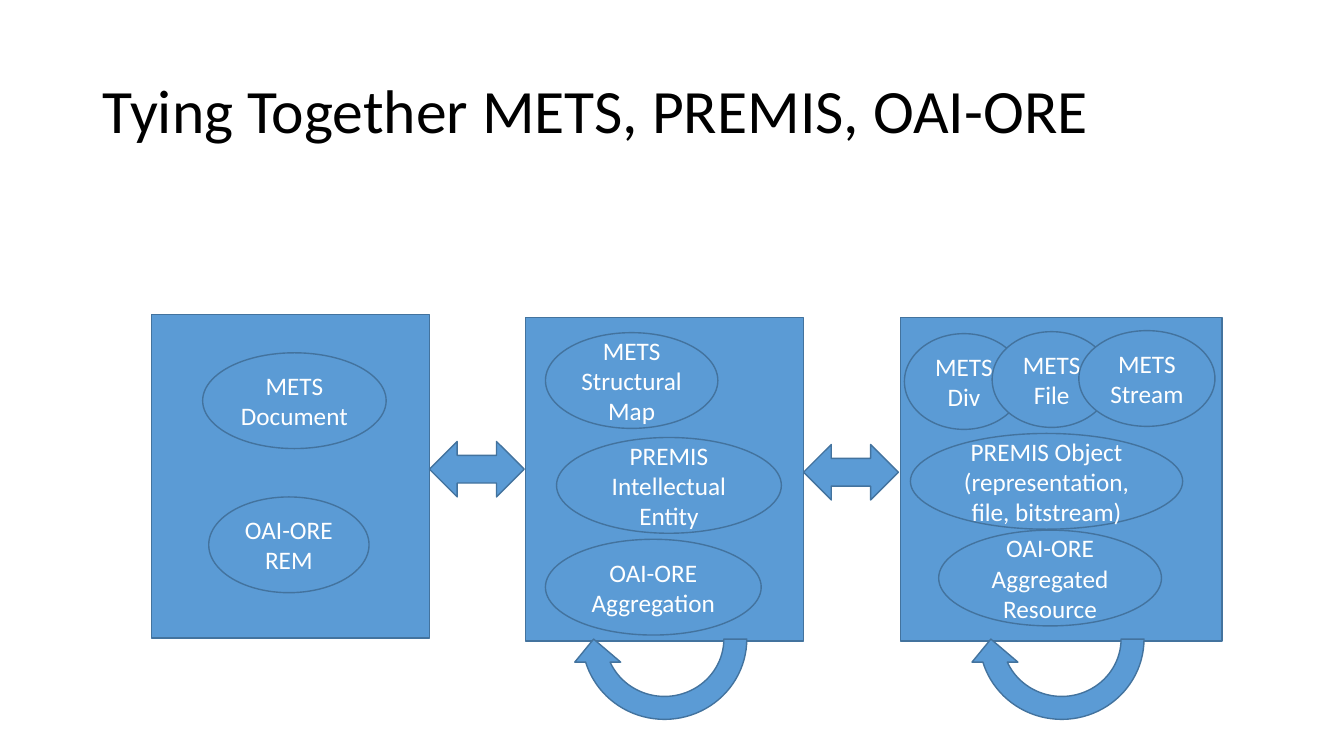
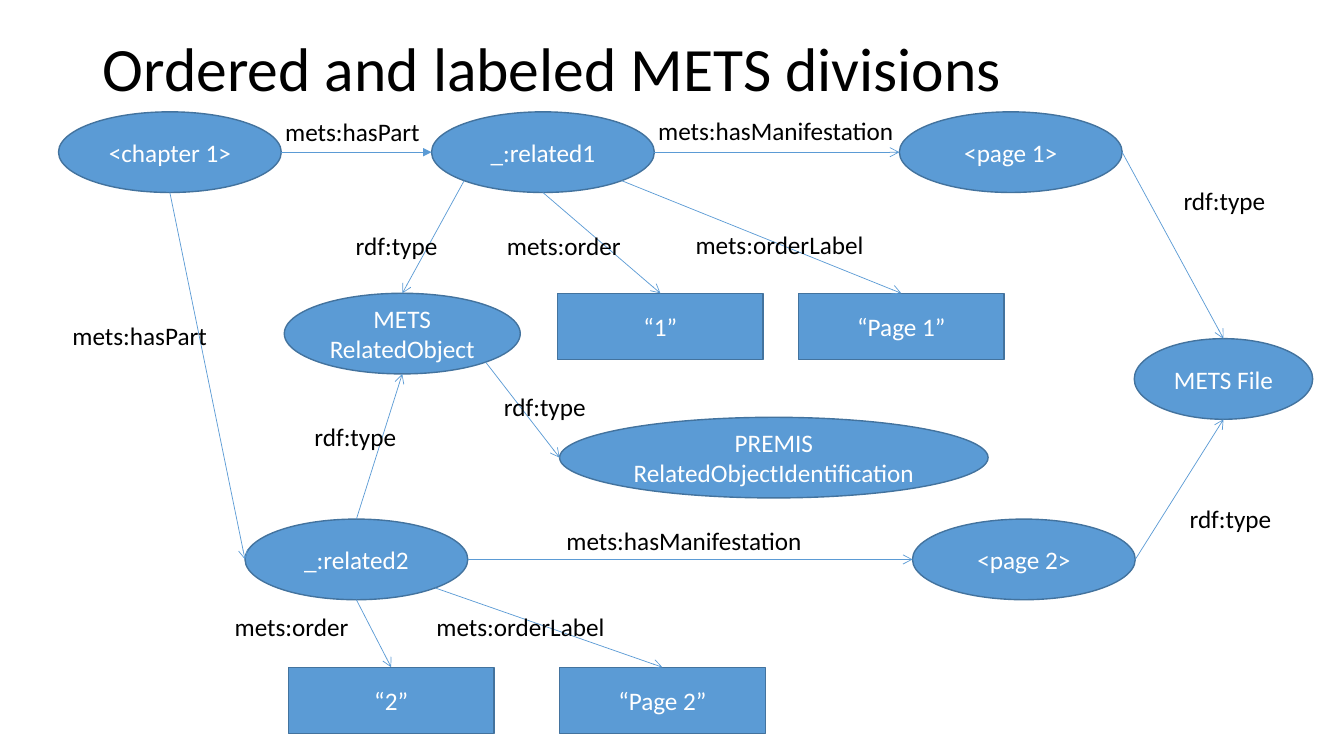
from lxml import etree
from pptx import Presentation
from pptx.dml.color import RGBColor
from pptx.enum.shapes import MSO_CONNECTOR, MSO_SHAPE
from pptx.enum.text import MSO_ANCHOR, MSO_AUTO_SIZE, PP_ALIGN
from pptx.oxml.ns import qn
from pptx.util import Inches, Pt

BLUE = RGBColor(0x5B, 0x9B, 0xD5)
OUTLINE = RGBColor(0x43, 0x73, 0x9E)
BLACK = RGBColor(0x00, 0x00, 0x00)
WHITE = RGBColor(0xFF, 0xFF, 0xFF)
FONT = "Calibri"
TITLE_ONLY = 5

OVAL, RECT = MSO_SHAPE.OVAL, MSO_SHAPE.RECTANGLE

# Slide 1: panel boxes, each with ovals as (left, top, width, text) inside it
OVAL_HEIGHT = 0.95
PANELS = [
    ((1.5, 3.12, 2.76, 3.21), [
        (0.57, 1.81, 1.59, "OAI-ORE\nREM"),
        (0.51, 0.38, 1.82, "METS\nDocument"),
    ]),
    ((5.21, 3.15, 2.76, 3.21), [
        (0.2, 2.2, 2.14, "OAI-ORE\nAggregation"),
        (0.2, 0.15, 1.71, "METS\nStructural Map"),
        (0.31, 1.19, 2.23, "PREMIS\nIntellectual\nEntity"),
    ]),
    ((8.93, 3.15, 3.19, 3.21), [
        (0.1, 1.15, 2.7, "PREMIS Object (representation, file, bitstream)"),
        (0.38, 2.11, 2.21, "OAI-ORE\nAggregated\nResource"),
        (0.04, 0.16, 1.18, "METS\nDiv"),
        (0.91, 0.14, 1.18, "METS\nFile"),
        (1.77, 0.13, 1.35, "METS\nStream"),
    ]),
]
LOOP_OFFSETS = {1: 0.45, 2: 0.67}

# Slide 2: graph nodes as name: (left, top, width, text)
NODE_HEIGHT, VALUE_HEIGHT, VALUE_WIDTH = 0.8, 0.66, 2.04
RESOURCES = {
    "chapter": (0.58, 1.11, 2.21, "<chapter 1>"),
    "page1": (8.92, 1.11, 2.21, "<page 1>"),
    "page2": (9.05, 5.15, 2.21, "<page 2>"),
    "related1": (4.28, 1.11, 2.21, "_:related1"),
    "related2": (2.43, 5.15, 2.21, "_:related2"),
    "premis": (5.55, 4.14, 4.25, "PREMIS RelatedObjectIdentification"),
    "file": (11.25, 3.36, 1.77, "METS File"),
    "object": (2.82, 2.91, 2.34, "METS RelatedObject"),
}
VALUES = {
    "order1": (5.53, 2.91, "“1”"),
    "label1": (7.92, 2.91, "“Page 1”"),
    "order2": (2.86, 6.62, "“2”"),
    "label2": (5.55, 6.62, "“Page 2”"),
}
LABEL_WIDTHS = {
    "mets:hasPart": 1.55, "mets:hasManifestation": 2.56, "rdf:type": 1.02,
    "mets:order": 1.34, "mets:orderLabel": 1.89,
}
# (from, its site, to, its site, label, label left, label top)
RELATIONS = [
    ("chapter", "right", "related1", "left", "mets:hasPart", 2.73, 1.11),
    ("chapter", "bottom", "related2", "left", "mets:hasPart", 0.62, 3.13),
    ("related1", "right", "page1", "left", "mets:hasManifestation", 6.43, 1.09),
    ("related2", "right", "page2", "left", "mets:hasManifestation", 5.52, 5.16),
    ("page1", "right", "file", "top", "rdf:type", 11.64, 1.79),
    ("page2", "right", "file", "bottom", "rdf:type", 11.7, 4.94),
    ("related1", "bottom left", "object", "top", "rdf:type", 3.43, 2.24),
    ("object", "bottom right", "premis", "left", "rdf:type", 4.9, 3.83),
    ("related2", "top", "object", "bottom", "rdf:type", 3.02, 4.13),
    ("related1", "bottom", "order1", "top", "mets:order", 4.93, 2.24),
    ("related1", "bottom right", "label1", "top", "mets:orderLabel", 6.8, 2.23),
    ("related2", "bottom", "order2", "top", "mets:order", 2.23, 6.02),
    ("related2", "bottom right", "label2", "top", "mets:orderLabel", 4.23, 6.02),
]
DIAGONAL = 0.5 ** 0.5
SITES = {
    "top": (0, -1), "left": (-1, 0), "bottom": (0, 1), "right": (1, 0),
    "bottom left": (-DIAGONAL, DIAGONAL), "bottom right": (DIAGONAL, DIAGONAL),
}


def inches(*lengths):
    return [Inches(length) for length in lengths]


def set_text(frame, text, size, color, align):
    frame.text = text
    for paragraph in frame.paragraphs:
        paragraph.alignment = align
        for run in paragraph.runs:
            run.font.name = FONT
            run.font.size = Pt(size)
            run.font.color.rgb = color


def add_titled_slide(prs, text, top, height):
    slide = prs.slides.add_slide(prs.slide_layouts[TITLE_ONLY])
    title = slide.shapes.title
    title.left, title.top, title.width, title.height = inches(0.92, top, 11.5, height)
    frame = title.text_frame
    set_text(frame, text, 44, BLACK, PP_ALIGN.LEFT)
    frame.auto_size = MSO_AUTO_SIZE.NONE
    frame.vertical_anchor = MSO_ANCHOR.MIDDLE
    frame.paragraphs[0].line_spacing = 0.9
    return slide


def add_blue_shape(slide, kind, box, text=""):
    shape = slide.shapes.add_shape(kind, *inches(*box))
    shape.shadow.inherit = False
    shape.fill.solid()
    shape.fill.fore_color.rgb = BLUE
    shape.line.color.rgb = OUTLINE
    shape.line.width = Pt(1)
    if text:
        shape.text_frame.word_wrap = True
        shape.text_frame.vertical_anchor = MSO_ANCHOR.MIDDLE
        set_text(shape.text_frame, text, 18, WHITE, PP_ALIGN.CENTER)
    return shape


def add_label(slide, text, left, top):
    label = slide.shapes.add_textbox(*inches(left, top, LABEL_WIDTHS[text], 0.4))
    label.text_frame.word_wrap = False
    label.text_frame.auto_size = MSO_AUTO_SIZE.SHAPE_TO_FIT_TEXT
    set_text(label.text_frame, text, 18, BLACK, PP_ALIGN.LEFT)


def site_point(shape, site):
    """Return the point of a shape's outline that lies in the given direction."""
    across, down = SITES[site]
    return (int(shape.left + shape.width * (1 + across) / 2),
            int(shape.top + shape.height * (1 + down) / 2))


def add_relation(slide, source, source_site, target, target_site, head):
    arrow = slide.shapes.add_connector(
        MSO_CONNECTOR.STRAIGHT,
        *site_point(source, source_site), *site_point(target, target_site))
    if target.auto_shape_type == RECT:
        arrow.end_connect(target, 0)
    arrow.line.color.rgb = BLUE
    arrow.line.width = Pt(0.5)
    etree.SubElement(arrow.line._get_or_add_ln(), qn("a:tailEnd"), type=head)
    etree.SubElement(arrow._element.spPr, qn("a:effectLst"))


def add_panel(slide, box, ovals):
    left, top = box[:2]
    add_blue_shape(slide, RECT, box)
    for dx, dy, width, text in ovals:
        add_blue_shape(slide, OVAL, (left + dx, top + dy, width, OVAL_HEIGHT), text)


def add_loop(slide, box, offset):
    """Add the arrow that leads from a panel's lower edge back to it."""
    left, top = box[:2]
    loop = add_blue_shape(slide, MSO_SHAPE.CIRCULAR_ARROW,
                          (left + offset, top + 2.28, 1.86, 1.82))
    loop.rotation = 180


def build_overview(prs):
    slide = add_titled_slide(prs, "Tying Together METS, PREMIS, OAI-ORE", 0.4, 1.45)
    for box, ovals in PANELS:
        add_panel(slide, box, ovals)
    for (left, top, width, _), _ in PANELS[:-1]:
        add_blue_shape(slide, MSO_SHAPE.LEFT_RIGHT_ARROW,
                       (left + width, top + 1.26, 0.94, 0.55))
    for index, offset in LOOP_OFFSETS.items():
        add_loop(slide, PANELS[index][0], offset)


def build_graph(prs):
    slide = add_titled_slide(prs, "Ordered and labeled METS divisions", 0.12, 1.18)
    nodes = {}
    for name, (left, top, width, text) in RESOURCES.items():
        nodes[name] = add_blue_shape(slide, OVAL, (left, top, width, NODE_HEIGHT), text)
    for name, (left, top, text) in VALUES.items():
        nodes[name] = add_blue_shape(
            slide, RECT, (left, top, VALUE_WIDTH, VALUE_HEIGHT), text)
    for index, relation in enumerate(RELATIONS):
        source, source_site, target, target_site, text, left, top = relation
        head = "triangle" if index == 0 else "arrow"
        add_relation(slide, nodes[source], source_site,
                     nodes[target], target_site, head)
        add_label(slide, text, left, top)


def main():
    prs = Presentation()
    prs.slide_width, prs.slide_height = inches(13.33, 7.5)
    build_overview(prs)
    build_graph(prs)
    prs.save("out.pptx")


if __name__ == "__main__":
    main()
